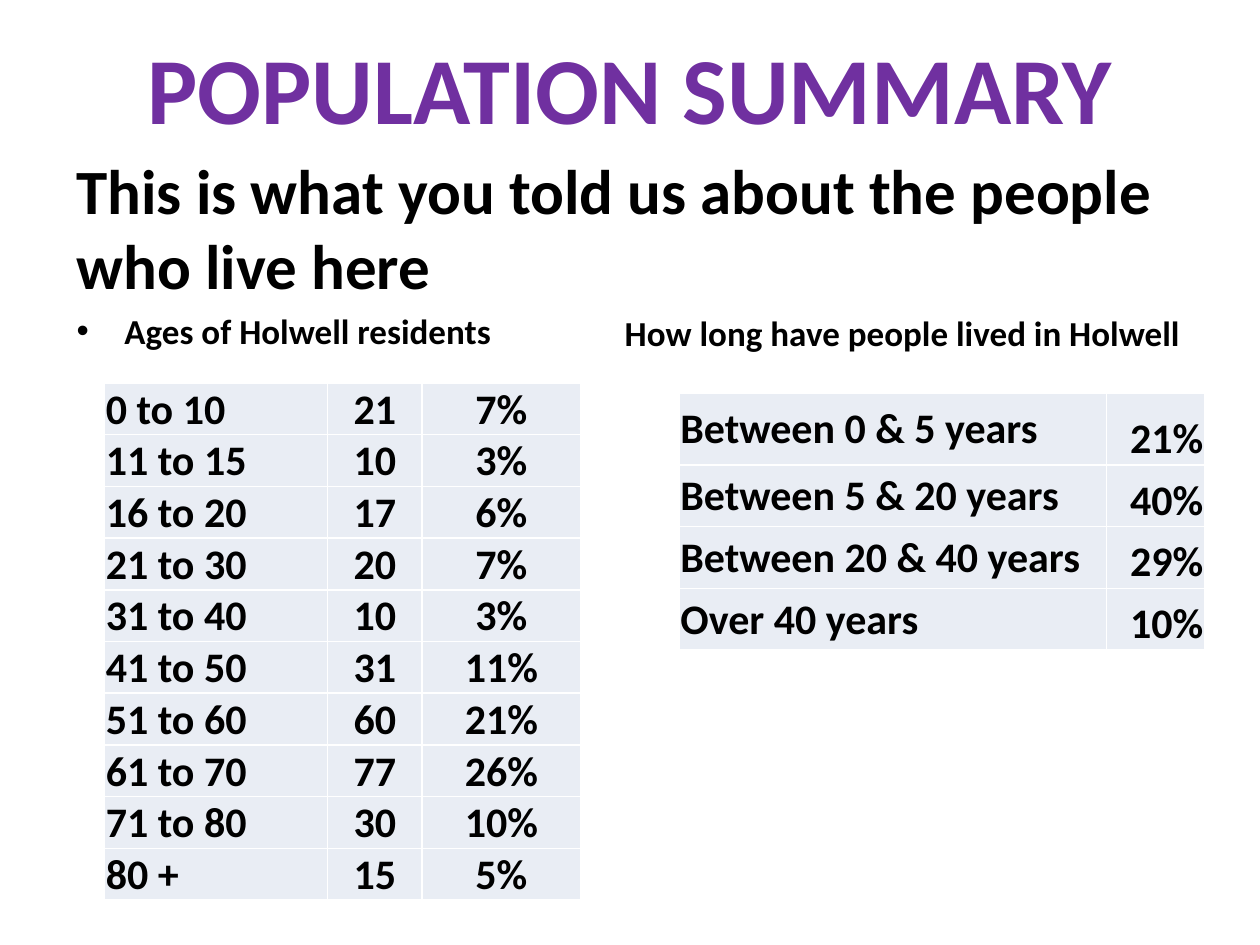
from dataclasses import dataclass

from lxml import etree
from pptx import Presentation
from pptx.dml.color import RGBColor
from pptx.enum.text import MSO_ANCHOR, PP_ALIGN
from pptx.oxml.ns import qn
from pptx.util import Inches, Pt

LEFT, CENTER, RIGHT = PP_ALIGN.LEFT, PP_ALIGN.CENTER, PP_ALIGN.RIGHT
MIDDLE, BOTTOM = MSO_ANCHOR.MIDDLE, MSO_ANCHOR.BOTTOM


@dataclass(frozen=True)
class Theme:
    font: str = "Calibri"
    purple: RGBColor = RGBColor(0x70, 0x30, 0xA0)
    black: RGBColor = RGBColor(0, 0, 0)
    cell: RGBColor = RGBColor(0xE9, 0xED, 0xF4)
    border: str = "FFFFFF"
    title: int = 54
    lead: int = 36
    heading: int = 20
    table: int = 24


T = Theme()


def add_run(p, text, size, color=T.black):
    r = p.add_run()
    r.text = text
    r.font.name, r.font.size, r.font.bold = T.font, Pt(size), True
    r.font.color.rgb = color


def add_grid(s, left, top, col_widths, row_heights, rows, styles):
    """Add a table; styles holds (alignment, anchor) for each column."""
    table = s.shapes.add_table(
        len(rows), len(col_widths), Inches(left), Inches(top),
        Inches(sum(col_widths)), Inches(sum(row_heights))).table
    table.first_row = table.horz_banding = False
    for column, width in zip(table.columns, col_widths):
        column.width = Inches(width)
    for row, height, values in zip(table.rows, row_heights, rows):
        row.height = Inches(height)
        for cell, value, (align, anchor) in zip(row.cells, values, styles):
            cell.margin_left = cell.margin_right = cell.margin_top = Inches(0.01)
            cell.margin_bottom = 0
            cell.vertical_anchor = anchor
            p = cell.text_frame.paragraphs[0]
            p.alignment = align
            add_run(p, value, T.table)
            # Borders come before the fill in the cell properties
            tc_pr = cell._tc.get_or_add_tcPr()
            for side in ("a:lnL", "a:lnR", "a:lnT", "a:lnB"):
                ln = etree.SubElement(tc_pr, qn(side), w=str(Pt(1)))
                fill = etree.SubElement(ln, qn("a:solidFill"))
                etree.SubElement(fill, qn("a:srgbClr"), val=T.border)
            cell.fill.solid()
            cell.fill.fore_color.rgb = T.cell


prs = Presentation()
prs.slide_width, prs.slide_height = Inches(10), Inches(7.5)
s = prs.slides.add_slide(prs.slide_layouts[5])

# Title
title = s.shapes.title
title.left, title.top = Inches(0.5), Inches(0.3)
title.width, title.height = Inches(9), Inches(0.77)
title.text_frame.vertical_anchor = MIDDLE
p = title.text_frame.paragraphs[0]
p.alignment = CENTER
add_run(p, "POPULATION SUMMARY", T.title, T.purple)

# Lead sentence and bulleted heading of the ages table
tf = s.shapes.add_textbox(Inches(0.51), Inches(1.15), Inches(9), Inches(6.06)).text_frame
tf.word_wrap = True
p = tf.paragraphs[0]
p.space_before = Pt(0.2 * T.lead)
add_run(p, "This is what you told us about the people who live here", T.lead)
p = tf.add_paragraph()
p.space_before = Pt(0.2 * T.heading)
add_run(p, "Ages of Holwell residents", T.heading)
p_pr = p._p.get_or_add_pPr()
p_pr.set("marL", str(Inches(0.38)))
p_pr.set("indent", str(-Inches(0.38)))
etree.SubElement(p_pr, qn("a:buFont"), typeface="Arial")
etree.SubElement(p_pr, qn("a:buChar"), char="•")

# Heading of the residence table
tf = s.shapes.add_textbox(Inches(4.86), Inches(2.42), Inches(4.75), Inches(0.44)).text_frame
tf.word_wrap = True
add_run(tf.paragraphs[0], "How long have people lived in Holwell", T.heading)

# Length of residence
residence = [
    ("Between 0 & 5 years", "21%"),
    ("Between 5 & 20 years", "40%"),
    ("Between 20 & 40 years", "29%"),
    ("Over 40 years", "10%"),
]
add_grid(s, 5.39, 3.12, [3.39, 0.78], [0.57] + [0.49] * 3, residence,
         [(LEFT, MIDDLE), (RIGHT, BOTTOM)])

# Ages of residents
ages = [
    ("0 to 10", "21", "7%"),
    ("11 to 15", "10", "3%"),
    ("16 to 20", "17", "6%"),
    ("21 to 30", "20", "7%"),
    ("31 to 40", "10", "3%"),
    ("41 to 50", "31", "11%"),
    ("51 to 60", "60", "21%"),
    ("61 to 70", "77", "26%"),
    ("71 to 80", "30", "10%"),
    ("80 +", "15", "5%"),
]
add_grid(s, 0.83, 3.04, [1.77, 0.75, 1.26], [0.41] * len(ages), ages,
         [(LEFT, MIDDLE), (CENTER, MIDDLE), (CENTER, MIDDLE)])

prs.save("out.pptx")
